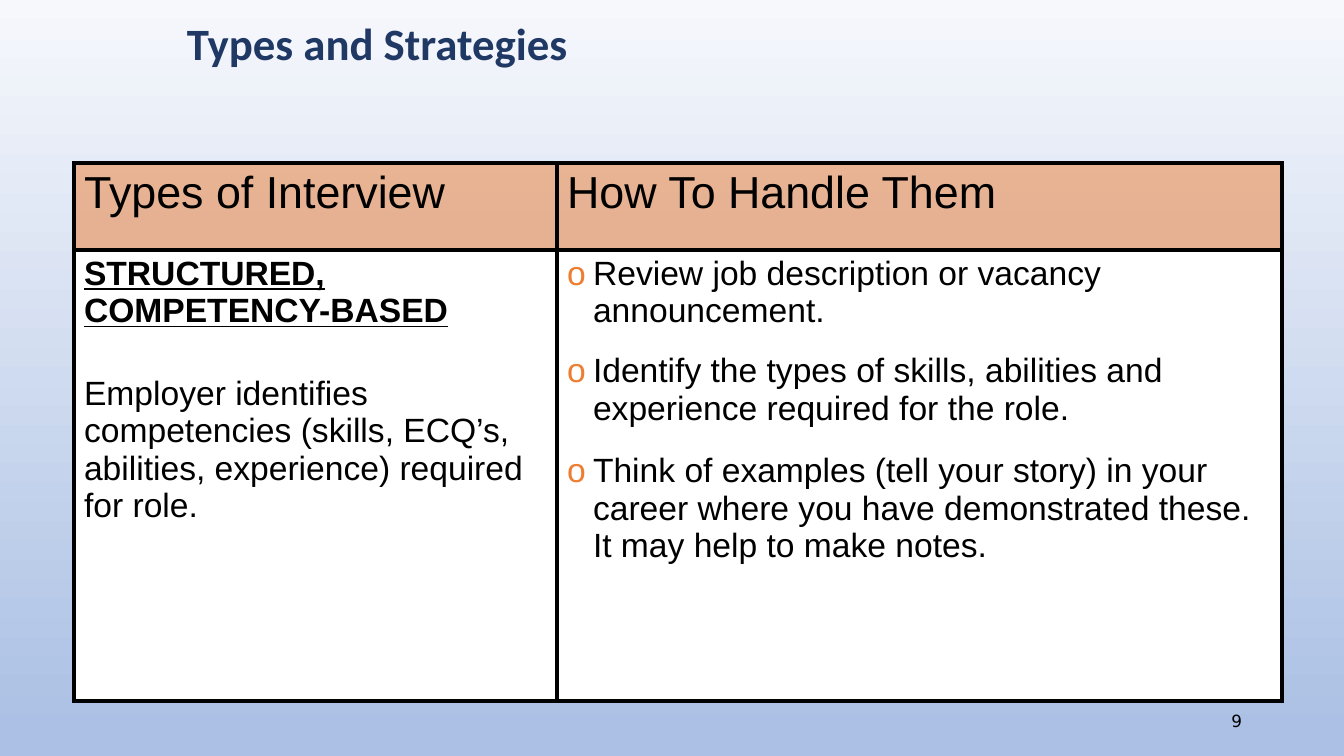
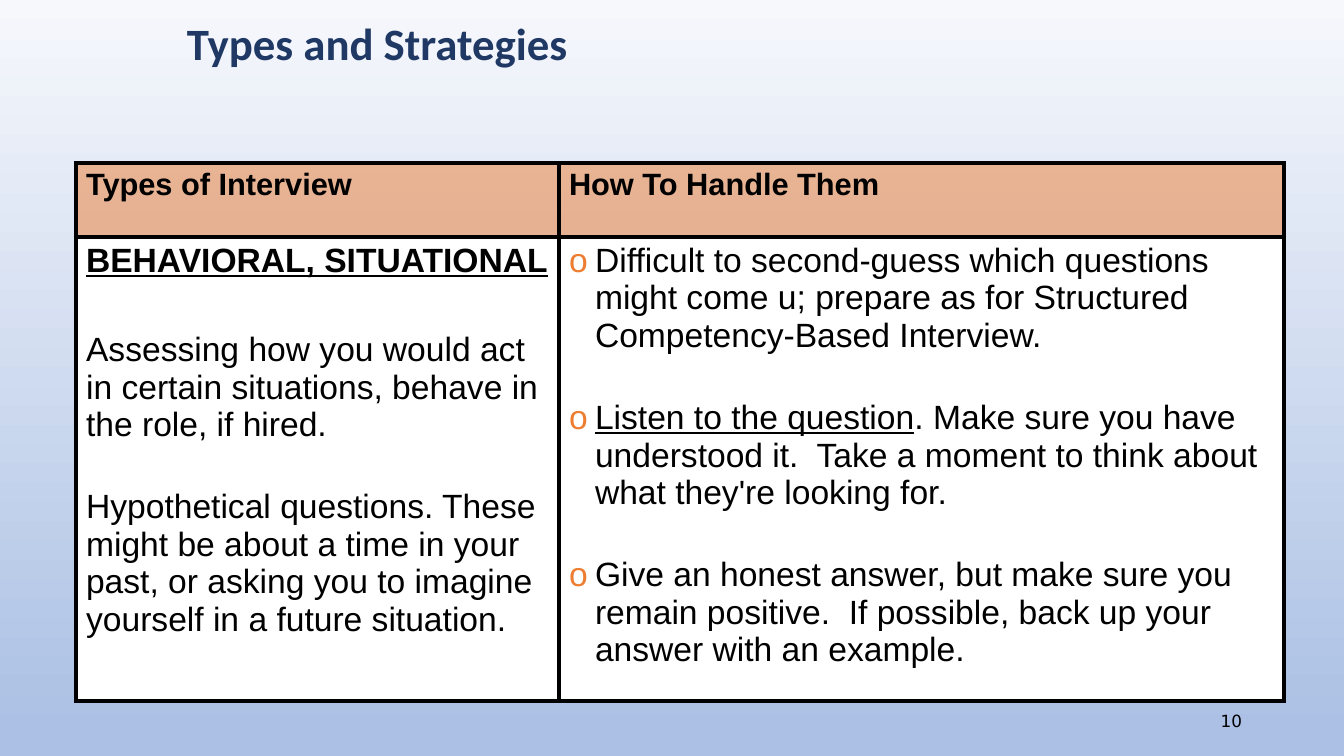
from lxml import etree
from pptx import Presentation
from pptx import util as u
from pptx.dml.color import RGBColor
from pptx.enum import text
from pptx.oxml.ns import qn

HUES = {"sky": "F6F8FC", "base": "ABC0E4", "title": "203864",
        "ink": "000000", "head": "ED7D31", "body": "FFFFFF"}
WIDE, HIGH = 1344, 756
COLS = (483, 725)
TOP, LOW = 163, 701  # table edges
DENT = 26  # hanging indent of bullets
BODY = 24
HEADS = ("Types of Interview", "How To Handle Them")

# Left cells: heading, then (gap in points, text).
# Right cells: (gap in points, underlined lead, text).
PAGES = [
    {"num": 9, "left": 74, "head": 87, "size": 32, "bold": False,
     "kind": "STRUCTURED, COMPETENCY-BASED",
     "about": [(32, "Employer identifies competencies (skills, ECQ’s, "
                    "abilities, experience) required for role.")],
     "tips": [(0, "", "Review job description or vacancy announcement."),
              (16, "", "Identify the types of skills, abilities and "
                       "experience required for the role."),
              (18, "", "Think of examples (tell your story) in your career "
                       "where you have demonstrated these. It may help to "
                       "make notes.")]},
    {"num": 10, "left": 76, "head": 74, "size": 22, "bold": True,
     "kind": "BEHAVIORAL, SITUATIONAL",
     "about": [(37, "Assessing how you would act in certain situations, "
                    "behave in the role, if hired."),
               (32, "Hypothetical questions. These might be about a time in "
                    "your past, or asking you to imagine yourself in a "
                    "future situation.")],
     "tips": [(0, "", "Difficult to second-guess which questions might come "
                      "u; prepare as for Structured Competency-Based "
                      "Interview."),
              (32, "Listen to the question",
               ". Make sure you have understood it.  Take a moment to think "
               "about what they're looking for."),
              (32, "", "Give an honest answer, but make sure you remain "
                       "positive.  If possible, back up your answer with an "
                       "example.")]},
]


def px(n):
    return u.Emu(round(n * 914400 / 100.8))


def rgb(name):
    return RGBColor.from_string(HUES[name])


def style(para, size, hue="ink", bold=False, face="Arial"):
    font = para.font
    font.name, font.size, font.bold = face, u.Pt(size), bold
    font.color.rgb = rgb(hue)


def label(slide, box, words, align, **look):
    frame = slide.shapes.add_textbox(*map(px, box)).text_frame
    frame.word_wrap = True
    frame.vertical_anchor = text.MSO_ANCHOR.MIDDLE
    para = frame.paragraphs[0]
    para.text, para.alignment = words, align
    style(para, **look)
    return para


def bullet(para):
    props = para._p.get_or_add_pPr()
    props.set("marL", str(px(DENT)))
    props.set("indent", str(-px(DENT)))
    tint = etree.SubElement(props, qn("a:buClr"))
    etree.SubElement(tint, qn("a:srgbClr"), val=HUES["head"])
    etree.SubElement(props, qn("a:buFont"), typeface="Arial")
    etree.SubElement(props, qn("a:buChar"), char="o")


def paint(cell, hue, alpha=None):
    """Border a cell on all sides, then fill it."""
    props = cell._tc.get_or_add_tcPr()
    for side in ("lnL", "lnR", "lnT", "lnB"):
        line = etree.SubElement(props, qn("a:" + side), w=str(u.Pt(3)))
        fill = etree.SubElement(line, qn("a:solidFill"))
        etree.SubElement(fill, qn("a:srgbClr"), val=HUES["ink"])
    cell.fill.solid()
    cell.fill.fore_color.rgb = rgb(hue)
    if alpha:
        tone = props.find(qn("a:solidFill"))[0]
        etree.SubElement(tone, qn("a:alpha"), val=str(alpha * 1000))


def add_para(frame, first, gap):
    para = frame.paragraphs[0] if first else frame.add_paragraph()
    if not first:
        para.space_before = u.Pt(gap)
    return para


def fill_about(frame, page):
    para = frame.paragraphs[0]
    para.text = page["kind"]
    style(para, BODY, bold=True)
    para.runs[0].font.underline = True
    for gap, words in page["about"]:
        para = add_para(frame, False, gap)
        para.text = words
        style(para, BODY)


def fill_tips(frame, page):
    for i, (gap, lead, words) in enumerate(page["tips"]):
        para = add_para(frame, i == 0, gap)
        bullet(para)
        style(para, BODY)
        if lead:
            run = para.add_run()
            run.text, run.font.underline = lead, True
        para.add_run().text = words


def add_grid(slide, page):
    rows = (page["head"], LOW - TOP - page["head"])
    box = (page["left"], TOP, sum(COLS), sum(rows))
    grid = slide.shapes.add_table(2, 2, *map(px, box)).table
    grid.first_row = grid.horz_banding = False
    for col, wide in zip(grid.columns, COLS):
        col.width = px(wide)
    for row, high in zip(grid.rows, rows):
        row.height = px(high)
    for i, words in enumerate(HEADS):
        cell = grid.cell(0, i)
        paint(cell, "head", 50)
        para = cell.text_frame.paragraphs[0]
        para.text = words
        style(para, page["size"], bold=page["bold"])
        paint(grid.cell(1, i), "body")
    fill_about(grid.cell(1, 0).text_frame, page)
    fill_tips(grid.cell(1, 1).text_frame, page)


def add_back(slide):
    fill = slide.background.fill
    fill.gradient()
    fill.gradient_angle = 270
    for stop, hue, pos in zip(fill.gradient_stops, ("sky", "base"), (0, 0.97)):
        stop.color.rgb, stop.position = rgb(hue), pos


def add_page(deck, page):
    slide = deck.slides.add_slide(deck.slide_layouts[6])
    add_back(slide)
    # Title and page number
    title = label(slide, (177, 25, 417, 42), "Types and Strategies",
                  text.PP_ALIGN.LEFT, size=32, hue="title", bold=True,
                  face="Calibri")
    title.line_spacing = 0.9
    label(slide, (950, 701, 302, 40), str(page["num"]),
          text.PP_ALIGN.RIGHT, size=12, face="DejaVu Sans")
    add_grid(slide, page)


def main():
    deck = Presentation()
    deck.slide_width, deck.slide_height = px(WIDE), px(HIGH)
    for page in PAGES:
        add_page(deck, page)
    deck.save("out.pptx")


if __name__ == "__main__":
    main()
